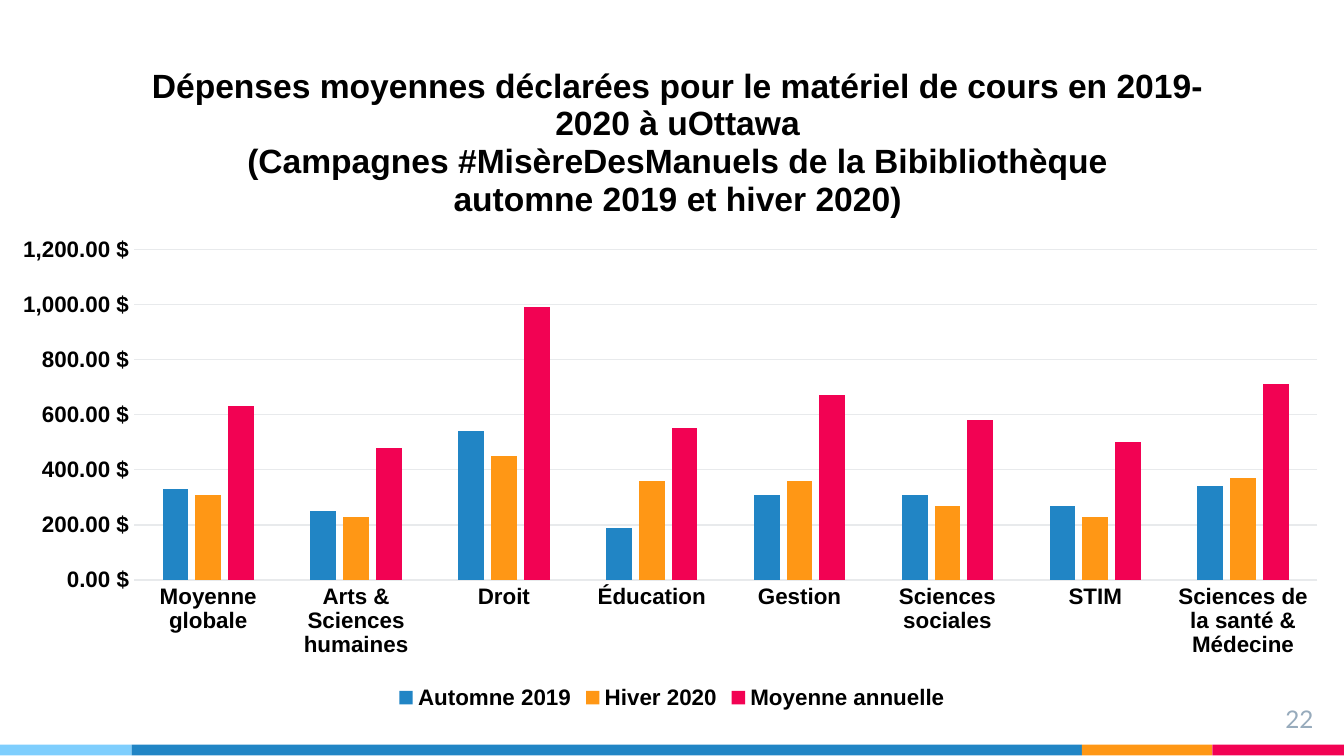
from lxml import etree
from pptx import Presentation
from pptx.chart.data import CategoryChartData
from pptx.dml.color import RGBColor
from pptx.enum.chart import XL_CHART_TYPE, XL_LEGEND_POSITION, XL_TICK_MARK
from pptx.enum.shapes import MSO_SHAPE
from pptx.enum.text import PP_ALIGN
from pptx.oxml import parse_xml
from pptx.oxml.ns import nsdecls, qn
from pptx.util import Inches, Pt

RECTANGLE = MSO_SHAPE.RECTANGLE
CLUSTERED = XL_CHART_TYPE.COLUMN_CLUSTERED
BOTTOM = XL_LEGEND_POSITION.BOTTOM
NO_TICK = XL_TICK_MARK.NONE
RIGHT = PP_ALIGN.RIGHT

BLACK = RGBColor(0x00, 0x00, 0x00)
SKY = RGBColor(0x7E, 0xCE, 0xFD)
BLUE = RGBColor(0x21, 0x85, 0xC5)
ORANGE = RGBColor(0xFF, 0x97, 0x15)
PINK = RGBColor(0xF2, 0x02, 0x53)
SLATE = RGBColor(0x67, 0x74, 0x80)
GRID_GRAY = RGBColor(0xE8, 0xEA, 0xEC)
NUMBER_GRAY = RGBColor(0x97, 0xAB, 0xBC)

TITLE_LINES = [
    "Dépenses moyennes déclarées pour le matériel de cours en 2019-2020 à uOttawa",
    "(Campagnes #MisèreDesManuels de la Bibibliothèque",
    "automne 2019 et hiver 2020)",
]
CATEGORIES = [
    "Moyenne globale", "Arts & Sciences humaines", "Droit", "Éducation",
    "Gestion", "Sciences sociales", "STIM", "Sciences de la santé & Médecine",
]
SERIES = [
    ("Automne 2019", BLUE, [330, 250, 540, 190, 310, 310, 270, 340]),
    ("Hiver 2020", ORANGE, [310, 230, 450, 360, 360, 270, 230, 370]),
    ("Moyenne annuelle", PINK, [630, 480, 990, 550, 670, 580, 500, 710]),
]
BANDS = [(SKY, 0.98), (BLUE, 7.07), (ORANGE, 0.97), (PINK, 0.98)]


def set_font(font, size, color, bold=False, name="Arial"):
    """Apply size, colour, weight and typeface to a font."""
    font.size = Pt(size)
    font.color.rgb = color
    font.bold = bold
    font.name = name


def set_layout(parent, **fractions):
    """Place a chart part by fractions of the chart area."""
    for layout in parent.findall(qn("c:layout")):
        parent.remove(layout)
    layout = parse_xml(f"<c:layout {nsdecls('c')}><c:manualLayout/></c:layout>")
    manual = layout[0]
    if "w" in fractions:
        etree.SubElement(manual, qn("c:layoutTarget")).set("val", "inner")
    for axis in ("x", "y"):
        etree.SubElement(manual, qn(f"c:{axis}Mode")).set("val", "edge")
    for key, value in fractions.items():
        etree.SubElement(manual, qn(f"c:{key}")).set("val", str(value))
    text = parent.find(qn("c:tx"))
    parent.insert(0 if text is None else 1, layout)


def add_bands(slide):
    """Draw the coloured strip along the bottom edge."""
    left = 0
    for color, width in BANDS:
        band = slide.shapes.add_shape(
            RECTANGLE, Inches(left), Inches(5.54), Inches(width), Inches(0.08))
        band.shadow.inherit = False
        band.fill.solid()
        band.fill.fore_color.rgb = color
        band.line.fill.background()
        left += width


def add_page_number(slide, number):
    """Write the page number at the lower right."""
    box = slide.shapes.add_textbox(
        Inches(9.27), Inches(5.14), Inches(0.6), Inches(0.34))
    frame = box.text_frame
    frame.word_wrap = True
    frame.margin_left = frame.margin_right = Inches(0.1)
    frame.margin_top = frame.margin_bottom = Inches(0.1)
    paragraph = frame.paragraphs[0]
    paragraph.text = number
    paragraph.alignment = RIGHT
    set_font(paragraph.font, 13, NUMBER_GRAY, name="Lato")


def style_title(chart):
    """Write the chart title, one paragraph a line."""
    chart.has_title = True
    title = chart.chart_title
    title.include_in_layout = False
    frame = title.text_frame
    frame.text = "\n".join(TITLE_LINES)
    for paragraph in frame.paragraphs:
        set_font(paragraph.font, 18, BLACK, bold=True)


def style_axes(chart):
    """Format both axes and the gridlines."""
    for axis in (chart.category_axis, chart.value_axis):
        axis.major_tick_mark = axis.minor_tick_mark = NO_TICK
        set_font(axis.tick_labels.font, 12, BLACK, bold=True)
    values = chart.value_axis
    values.minimum_scale, values.maximum_scale, values.major_unit = 0, 1200, 200
    values.tick_labels.number_format = "#,##0.00\\ [$$-C0C]"
    values.tick_labels.number_format_is_linked = False
    values.format.line.fill.background()
    for line in (chart.category_axis.format.line, values.major_gridlines.format.line):
        line.color.rgb = GRID_GRAY
        line.width = Pt(0.75)


def add_expense_chart(slide):
    """Add the clustered columns of mean expenses."""
    data = CategoryChartData()
    data.categories = CATEGORIES
    for name, _, values in SERIES:
        data.add_series(name, values)
    chart = slide.shapes.add_chart(
        CLUSTERED, Inches(0), Inches(0.3), Inches(10), Inches(5.02), data).chart
    set_font(chart.font, 10, SLATE)
    style_title(chart)
    style_axes(chart)
    chart.has_legend = True
    chart.legend.position = BOTTOM
    chart.legend.include_in_layout = False
    set_font(chart.legend.font, 12, BLACK, bold=True)
    plot = chart.plots[0]
    plot.gap_width = 219
    plot.overlap = -27
    plot.vary_by_categories = False
    for series, (_, color, _) in zip(plot.series, SERIES):
        series.format.fill.solid()
        series.format.fill.fore_color.rgb = color
    plot_area = chart.element.find(".//" + qn("c:plotArea"))
    set_layout(plot_area, x=0.1, y=0.31, w=0.88, h=0.49)
    set_layout(chart.element.find(".//" + qn("c:title")), x=0.11, y=0.03)


def main():
    """Build and save the slide."""
    presentation = Presentation()
    presentation.slide_width = Inches(10)
    presentation.slide_height = Inches(10 * 9 / 16)
    slide = presentation.slides.add_slide(presentation.slide_layouts[6])
    add_bands(slide)
    add_page_number(slide, "22")
    add_expense_chart(slide)
    presentation.save("out.pptx")


if __name__ == "__main__":
    main()
